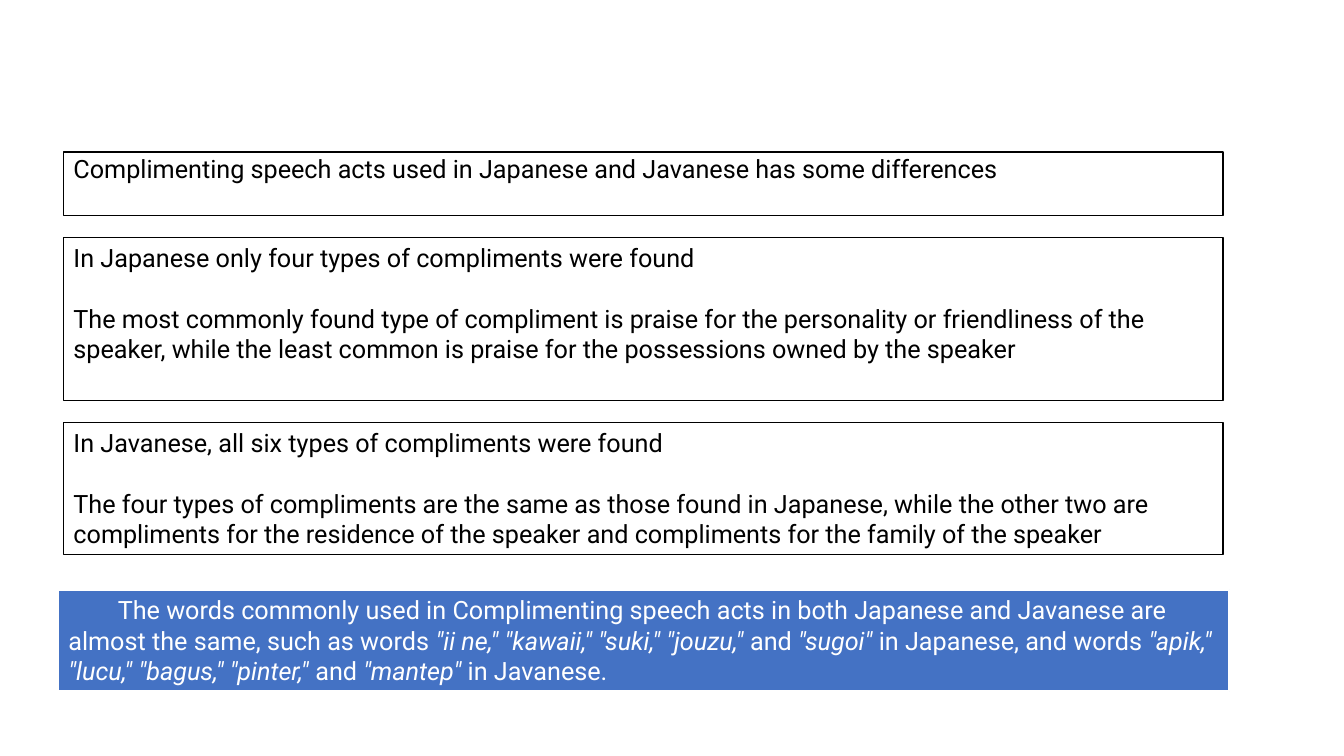
from pptx import Presentation
from pptx.dml.color import RGBColor
from pptx.enum.shapes import MSO_SHAPE
from pptx.enum.text import MSO_ANCHOR, PP_ALIGN
from pptx.util import Inches, Pt

THEME = {
    "font": "Roboto",
    "size": Pt(18),
    "gap": Pt(22),
    "plain": {"fill": "FFFFFF", "line": "000000", "text": "000000", "width": 1},
    "accent": {"fill": "4472C4", "line": "FFFFFF", "text": "FFFFFF", "width": 1.5},
}

WIDE, HIGH = Inches(13.33), Inches(7.5)
TOP = 20.13
SIDE = {"plain": (4.73, 86.27), "accent": (4.35, 87.1)}

BOXES = [
    {"look": "plain", "high": 8.4, "after": 2.87, "lead": 0.9, "indent": 0, "lines": [
        "Complimenting speech acts used in Japanese and Javanese has some differences",
    ]},
    {"look": "plain", "high": 21.6, "after": 2.87, "lead": 1.0, "indent": 0, "lines": [
        "In Japanese only four types of compliments were found",
        "The most commonly found type of compliment is praise for the personality or friendliness of the speaker, while the least common is praise for the possessions owned by the speaker",
    ]},
    {"look": "plain", "high": 17.47, "after": 4.66, "lead": 1.0, "indent": 0, "lines": [
        "In Javanese, all six types of compliments were found",
        "The four types of compliments are the same as those found in Japanese, while the other two are compliments for the residence of the speaker and compliments for the family of the speaker",
    ]},
    {"look": "accent", "high": 13.47, "after": 0, "lead": 1.0, "indent": 3.68, "lines": [
        'The words commonly used in Complimenting speech acts in both Japanese and Javanese are almost the same, such as words *"ii ne," "kawaii," "suki," "jouzu,"* and *"sugoi"* in Japanese, and words *"apik," "lucu," "bagus," "pinter,"* and *"mantep"* in Javanese.',
    ]},
]


def share(part, whole):
    return round(part * whole / 100)


def apply(target, values):
    for name, value in values.items():
        setattr(target, name, value)


def write(para, line, color):
    for turn, part in enumerate(line.split("*")):
        run = para.add_run()
        run.text = part
        apply(run.font, {"name": THEME["font"], "size": THEME["size"], "italic": turn % 2 == 1})
        run.font.color.rgb = RGBColor.from_string(color)


def draw(slide, box, top):
    look = THEME[box["look"]]
    left, wide = SIDE[box["look"]]
    shape = slide.shapes.add_shape(
        MSO_SHAPE.RECTANGLE, share(left, WIDE), share(top, HIGH),
        share(wide, WIDE), share(box["high"], HIGH))
    shape.shadow.inherit = False
    shape.fill.solid()
    shape.fill.fore_color.rgb = RGBColor.from_string(look["fill"])
    shape.line.color.rgb = RGBColor.from_string(look["line"])
    shape.line.width = Pt(look["width"])
    frame = shape.text_frame
    apply(frame, {"word_wrap": True, "vertical_anchor": MSO_ANCHOR.TOP})
    for order, line in enumerate(box["lines"]):
        para = frame.add_paragraph() if order else frame.paragraphs[0]
        apply(para, {"alignment": PP_ALIGN.LEFT, "line_spacing": box["lead"]})
        if order:
            para.space_before = THEME["gap"]
        if box["indent"]:
            para._p.get_or_add_pPr().set("indent", str(share(box["indent"], WIDE)))
        write(para, line, look["text"])


def main():
    deck = Presentation()
    apply(deck, {"slide_width": WIDE, "slide_height": HIGH})
    slide = deck.slides.add_slide(deck.slide_layouts[6])
    top = TOP
    for box in BOXES:
        draw(slide, box, top)
        top += box["high"] + box["after"]
    deck.save("out.pptx")


if __name__ == "__main__":
    main()
